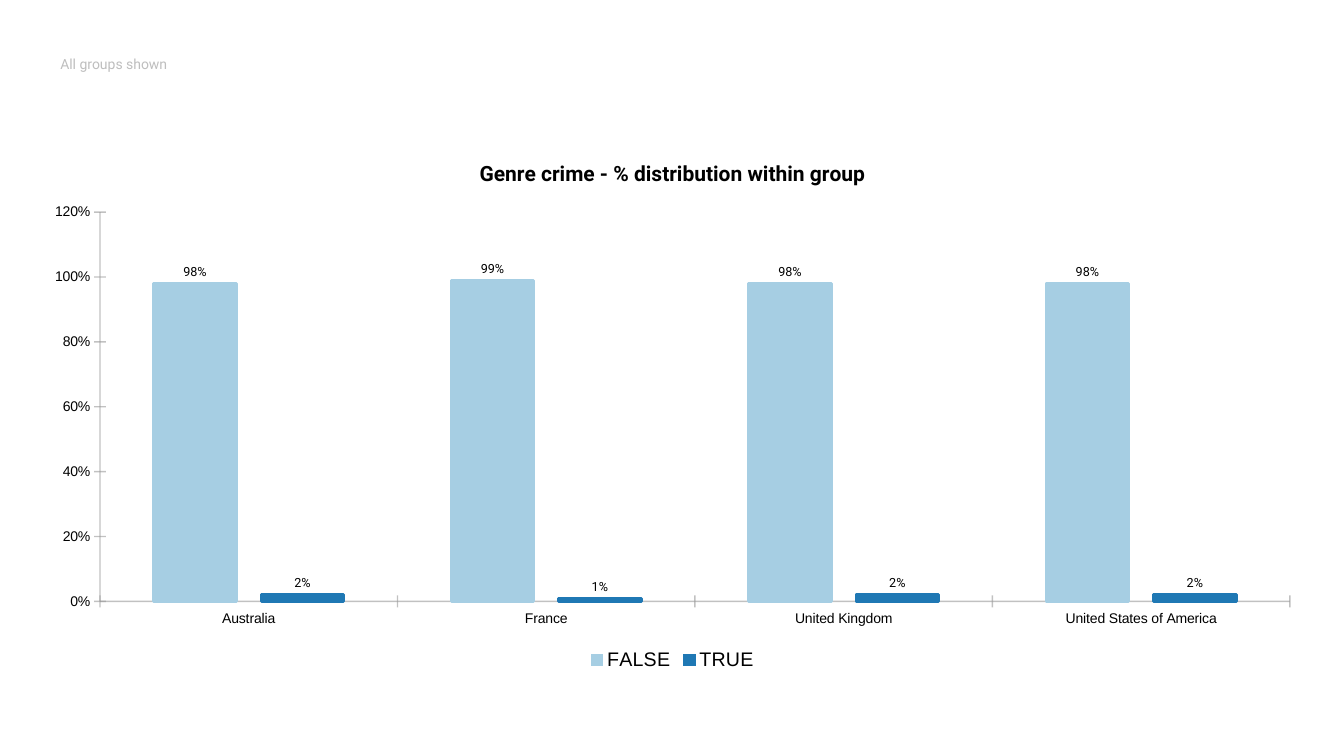
from lxml.etree import SubElement as Sub
from pptx import Presentation
from pptx.chart.data import CategoryChartData as Data
from pptx.dml.color import RGBColor as Rgb
from pptx.enum.chart import XL_CHART_TYPE as Kind
from pptx.enum.chart import XL_LABEL_POSITION as Spot
from pptx.enum.chart import XL_LEGEND_POSITION as Side
from pptx.enum.chart import XL_TICK_MARK as Tick
from pptx.oxml.ns import qn
from pptx.util import Emu, Pt

PX = 9525
HUES = {"ink": "000000", "note": "BEBEBE", "axis": "999999",
        "FALSE": "A6CEE3", "TRUE": "1F78B4"}
LANDS = ["Australia", "France", "United Kingdom", "United States of America"]
SHARES = {"FALSE": [0.98, 0.99, 0.98, 0.98], "TRUE": [0.02, 0.01, 0.02, 0.02]}


def px(*nums):
    """Turn pixel lengths into EMU."""
    return [Emu(num * PX) for num in nums]


def hue(name):
    """Look up a named colour."""
    return Rgb.from_string(HUES[name])


def style(font, size, face="Roboto", tint="ink", bold=False):
    """Set the look of a font."""
    font.size, font.name, font.bold = Pt(size), face, bold
    font.color.rgb = hue(tint)


def add_note(slide, text, box):
    """Add a small grey line of text."""
    frame = slide.shapes.add_textbox(*px(*box)).text_frame
    frame.word_wrap = True
    run = frame.paragraphs[0].add_run()
    run.text = text
    style(run.font, 10, tint="note")


def dress_axis(axis, form):
    """Style one axis with a faint line and crossing ticks."""
    axis.has_major_gridlines = False
    axis.major_tick_mark, axis.minor_tick_mark = Tick.CROSS, Tick.NONE
    axis.tick_labels.number_format = form
    axis.tick_labels.number_format_is_linked = False
    style(axis.tick_labels.font, 10, "Arial")
    line = axis.format.line
    line.width = Pt(1)
    line.color.rgb = hue("axis")
    tint = axis._element.xpath("c:spPr/a:ln/a:solidFill/a:srgbClr")[0]
    Sub(tint, qn("a:alpha")).set("val", "60000")


def dress_bars(bars):
    """Colour one series and label its bars."""
    fill, line = bars.format.fill, bars.format.line
    fill.solid()
    fill.fore_color.rgb = line.color.rgb = hue(bars.name)
    line.width = Pt(2)
    bars.invert_if_negative = False
    marks = bars.data_labels
    marks.show_value, marks.position = True, Spot.OUTSIDE_END
    marks.number_format, marks.number_format_is_linked = "0%", False
    style(marks.font, 9)


def add_title(chart, text):
    """Give the chart a bold title."""
    frame = chart.chart_title.text_frame
    run = frame.paragraphs[0].add_run()
    run.text = text
    style(run.font, 15, bold=True)
    chart.chart_title.include_in_layout = False


def add_key(chart):
    """Put a legend below the chart."""
    chart.has_legend = True
    chart.legend.position = Side.BOTTOM
    chart.legend.include_in_layout = False
    style(chart.legend.font, 14, "Arial")


def add_bars(slide, title, box):
    """Add the clustered column chart."""
    data = Data(number_format="0%")
    data.categories = LANDS
    for name, vals in SHARES.items():
        data.add_series(name, vals)
    chart = slide.shapes.add_chart(Kind.COLUMN_CLUSTERED, *px(*box), data).chart
    style(chart.font, 18)
    add_title(chart, title)
    add_key(chart)
    dress_axis(chart.category_axis, "General")
    dress_axis(chart.value_axis, "0%")
    chart.value_axis.minimum_scale = 0
    plot = chart.plots[0]
    plot.gap_width, plot.overlap, plot.vary_by_categories = 130, -30, False
    for bars in plot.series:
        dress_bars(bars)


def main():
    """Build and save the slide."""
    deck = Presentation()
    deck.slide_width, deck.slide_height = px(1280, 720)
    slide = deck.slides.add_slide(deck.slide_layouts[6])
    add_bars(slide, "Genre crime - % distribution within group",
             (28, 133, 1225, 510))
    add_note(slide, "All groups shown", (48, 48, 576, 96))
    deck.save("out.pptx")


if __name__ == "__main__":
    main()
